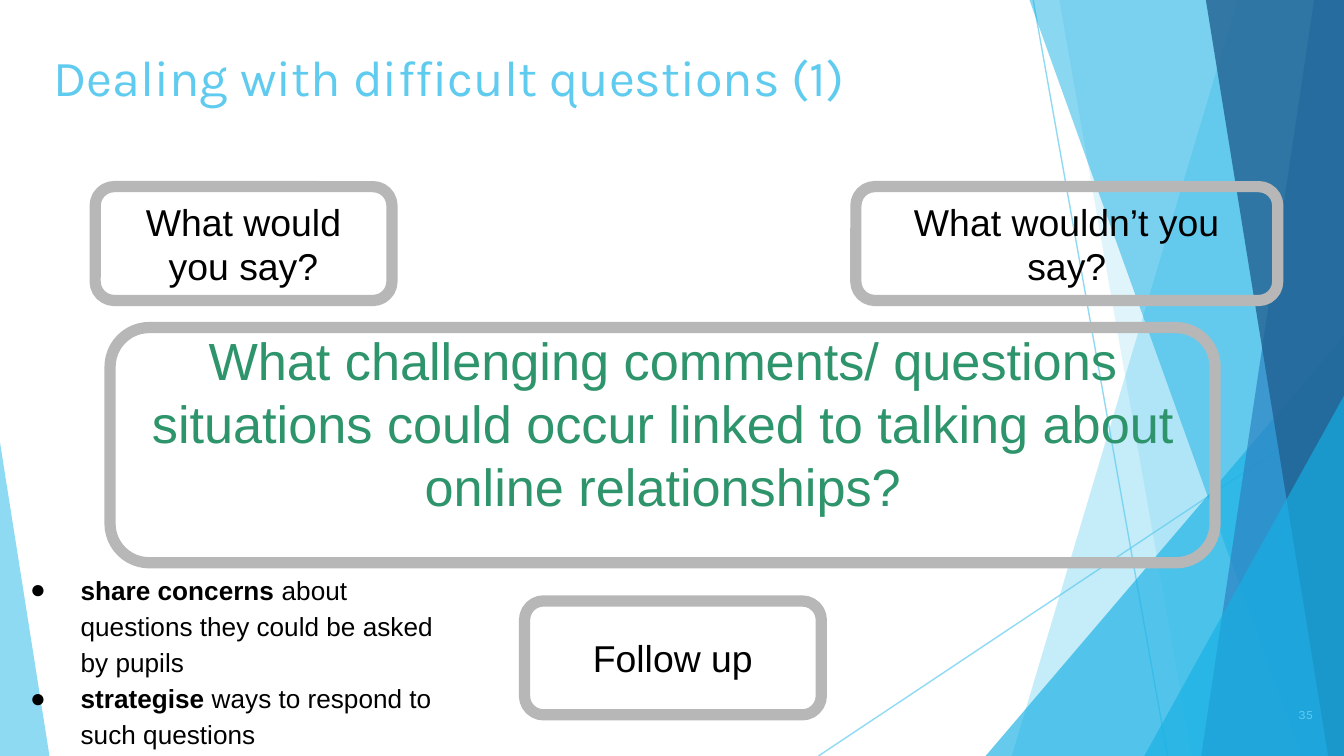
from lxml import etree
from pptx import Presentation
from pptx.dml.color import RGBColor
from pptx.enum import shapes, text
from pptx.oxml.ns import qn
from pptx.util import Pt

COLORS = {
    "sky": "5FCBEF", "cyan": "17B0E4", "blue": "2E83C3", "navy": "226292",
    "border": "B7B7B7", "green": "2E946B", "black": "000000",
}
WIDTH, HEIGHT = 720, 405


def rgb(name):
    return RGBColor.from_string(COLORS[name])


def paint(part, color_format, color, opacity):
    """Colour a fill or line, make it translucent and drop the shadow."""
    color_format.solid()
    color_format.fore_color.rgb = rgb(color)
    srgb = part.element.spPr.find(".//" + qn("a:srgbClr"))
    etree.SubElement(srgb, qn("a:alpha"), val=str(opacity * 1000))
    etree.SubElement(part.element.spPr, qn("a:effectLst"))


prs = Presentation()
prs.slide_width, prs.slide_height = Pt(WIDTH), Pt(HEIGHT)
slide = prs.slides.add_slide(prs.slide_layouts[1])
title, actions = slide.placeholders

# Background facets, from back to front
for ends in [(553.5, 0, 625.5, HEIGHT), (WIDTH, 217.5, 438.5, HEIGHT)]:
    ray = slide.shapes.add_connector(shapes.MSO_CONNECTOR.STRAIGHT, *map(Pt, ends))
    ray.line.width = Pt(0.75)
    paint(ray, ray.line.fill, "sky", 70)

# Bands reach the right edge: (top x, bottom x); triangles: (left, top, width, apex)
facets = [
    ("band", (663, 542), "sky", 36),
    ("band", (567.5, 638.5), "sky", 20),
    ("triangle", (528, 180, 192, 1), "cyan", 66),
    ("band", (551.5, 697), "cyan", 50),
    ("band", (704, 643.5), "blue", 70),
    ("band", (646, 711.5), "navy", 80),
    ("triangle", (613, 212, 107, 1), "cyan", 66),
    ("triangle", (0, 237, 26.5, 0), "sky", 70),
]
for kind, place, color, opacity in facets:
    if kind == "band":
        top_x, bottom_x = place
        builder = slide.shapes.build_freeform(Pt(top_x), 0)
        corners = [(WIDTH, 0), (WIDTH, HEIGHT), (bottom_x, HEIGHT)]
        builder.add_line_segments([(Pt(x), Pt(y)) for x, y in corners], close=True)
        facet = builder.convert_to_shape()
    else:
        left, top, width, apex = place
        facet = slide.shapes.add_shape(
            shapes.MSO_SHAPE.ISOSCELES_TRIANGLE,
            Pt(left), Pt(top), Pt(width), Pt(HEIGHT - top))
        facet.adjustments[0] = apex
    facet.line.fill.background()
    paint(facet, facet.fill, color, opacity)

# Placeholders go in front of the facets
for placeholder, box in [(title, (21.5, 17.5, 610.5, 45)), (actions, (0, 301.5, 253.5, 103))]:
    placeholder.element.getparent().append(placeholder.element)
    for side, length in zip(("left", "top", "width", "height"), box):
        setattr(placeholder, side, Pt(length))
    placeholder.text_frame.auto_size = text.MSO_AUTO_SIZE.NONE
    placeholder.text_frame.vertical_anchor = text.MSO_ANCHOR.TOP

title.text_frame.text = "Dealing with difficult questions (1)"
title.text_frame.margin_top = Pt(7.2)
page_number = slide.shapes.add_textbox(Pt(667.5), Pt(367), Pt(43), Pt(31))
page_number.text_frame.text = "35"
page_number.text_frame.word_wrap = True
page_number.text_frame.vertical_anchor = text.MSO_ANCHOR.MIDDLE
for label, size, align in [(title, 27, text.PP_ALIGN.LEFT), (page_number, 6.8, text.PP_ALIGN.RIGHT)]:
    line = label.text_frame.paragraphs[0]
    line.alignment = align
    line.font.name, line.font.size = "Karla", Pt(size)
    line.font.color.rgb = rgb("sky")

# Framed questions: wording, box, text size, colour, top and bottom margin
questions = [
    ("What challenging comments/ questions situations could occur linked to "
     "talking about online relationships?", (59, 175.5, 592, 126), 28, "green", 0, 24),
    ("What would you say?", (51, 100, 159, 61), 20, "black", 7.2, 7.2),
    ("What wouldn’t you say?", (458.5, 100, 226, 61), 20, "black", 7.2, 7.2),
    ("Follow up", (281, 322, 159, 61), 20, "black", 7.2, 7.2),
]
for wording, box, size, color, margin_top, margin_bottom in questions:
    frame = slide.shapes.add_shape(shapes.MSO_SHAPE.ROUNDED_RECTANGLE, *map(Pt, box))
    frame.shadow.inherit = False
    frame.fill.background()
    frame.line.color.rgb = rgb("border")
    frame.line.width = Pt(6)
    formats = {
        "text": wording, "word_wrap": True, "vertical_anchor": text.MSO_ANCHOR.MIDDLE,
        "margin_left": Pt(7.2), "margin_right": Pt(7.2),
        "margin_top": Pt(margin_top), "margin_bottom": Pt(margin_bottom),
    }
    for attribute, value in formats.items():
        setattr(frame.text_frame, attribute, value)
    question = frame.text_frame.paragraphs[0]
    question.alignment = text.PP_ALIGN.CENTER
    question.font.name, question.font.size = "Arial", Pt(size)
    question.font.color.rgb = rgb(color)

# Bulleted actions with a bold lead
items = [
    ("share concerns", " about questions they could be asked by pupils", 16),
    ("strategise", " ways to respond to such questions", 0),
]
for index, (lead, rest, space_before) in enumerate(items):
    item = actions.text_frame.paragraphs[0] if index == 0 else actions.text_frame.add_paragraph()
    item.line_spacing = 1.15
    item.space_before = Pt(space_before)
    for wording, bold in [(lead, True), (rest, False)]:
        run = item.add_run()
        run.text = wording
        for attribute, value in {"name": "Arial", "size": Pt(14), "bold": bold}.items():
            setattr(run.font, attribute, value)
        run.font.color.rgb = rgb("black")
    properties = item._p.get_or_add_pPr()
    properties.set("marL", str(Pt(36)))
    properties.set("indent", str(-Pt(27)))
    bullet_color = etree.SubElement(properties, qn("a:buClr"))
    etree.SubElement(bullet_color, qn("a:srgbClr"), val=COLORS["black"])
    etree.SubElement(properties, qn("a:buFont"), typeface="Arial")
    etree.SubElement(properties, qn("a:buChar"), char="●")

prs.save("out.pptx")
